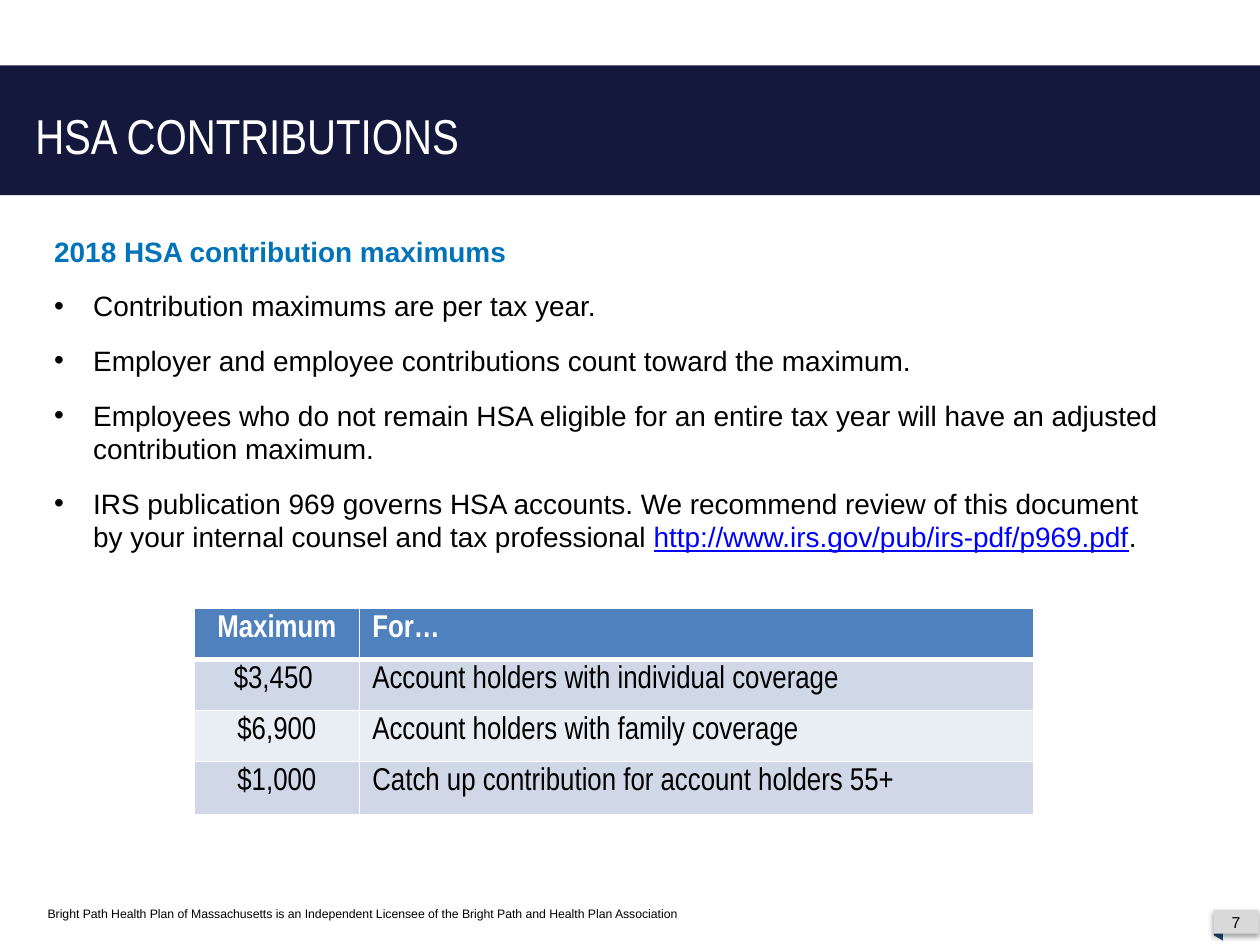
from typing import NamedTuple

from lxml.etree import SubElement
from pptx import Presentation
from pptx.dml.color import RGBColor
from pptx.enum.shapes import MSO_SHAPE
from pptx.enum.text import MSO_ANCHOR, MSO_AUTO_SIZE, PP_ALIGN
from pptx.oxml.ns import qn
from pptx.util import Inches, Pt

WIDE, HIGH = Inches(10), Inches(7.5)
COL, ROW = WIDE / 100, HIGH / 75
BLACK, WHITE, NAVY = "000000", "FFFFFF", "13183C"
BLUE, LINK, HEAD = "0073B9", "0000FF", "4F81BD"
BANDS = ("D0D8E8", "E9EDF4")


class Box(NamedTuple):
    x: float
    y: float
    w: float
    h: float

    def place(self) -> tuple[int, int, int, int]:
        return (round(self.x * COL), round(self.y * ROW),
                round(self.w * COL), round(self.h * ROW))


class Face(NamedTuple):
    name: str
    size: float
    tint: str = BLACK
    bold: bool = False


class Limit(NamedTuple):
    sum: str
    who: str


LIMITS = (
    Limit("Maximum", "For…"),
    Limit("$3,450 ", "Account holders with individual coverage"),
    Limit("$6,900", "Account holders with family coverage"),
    Limit("$1,000", "Catch up contribution for account holders 55+"),
)
POINTS = (
    ("Contribution maximums are per tax year.",),
    ("Employer and employee contributions count toward the maximum.",),
    ("Employees who do not remain HSA eligible for an entire tax year "
     "will have an adjusted contribution maximum.",),
    ("IRS publication 969 governs HSA accounts. We recommend review of this "
     "document by your internal counsel and tax professional ",
     "http://www.irs.gov/pub/irs-pdf/p969.pdf", "."),
)


def color(code: str) -> RGBColor:
    return RGBColor.from_string(code)


def style(para, face: Face, align=PP_ALIGN.LEFT, gap: float = 0) -> None:
    para.alignment = align
    para.space_before = para.space_after = Pt(gap)
    font = para.font
    font.name, font.size, font.bold = face.name, Pt(face.size), face.bold
    font.color.rgb = color(face.tint)


def move(shape, box: Box) -> None:
    shape.left, shape.top, shape.width, shape.height = box.place()


def block(slide, kind, box: Box, fill: str):
    shape = slide.shapes.add_shape(kind, *box.place())
    shape.shadow.inherit = False
    shape.fill.solid()
    shape.fill.fore_color.rgb = color(fill)
    shape.line.fill.background()
    return shape


def shade(shape) -> None:
    drop = SubElement(shape.element.spPr.find(qn("a:effectLst")), qn("a:outerShdw"),
                      blurRad=str(Pt(3.1)), dist=str(Pt(1.8)), dir="5400000")
    tone = SubElement(drop, qn("a:srgbClr"), val=BLACK)
    SubElement(tone, qn("a:alpha"), val="35000")


def label(slide, box: Box, text: str, face: Face, align=PP_ALIGN.LEFT,
          anchor=MSO_ANCHOR.TOP) -> None:
    frame = slide.shapes.add_textbox(*box.place()).text_frame
    frame.word_wrap = True
    frame.vertical_anchor = anchor
    frame.text = text
    style(frame.paragraphs[0], face, align)


def title(slide) -> None:
    band = block(slide, MSO_SHAPE.RECTANGLE, Box(0, 5.2, 100, 10.3), NAVY)
    head = slide.shapes.title
    head.element.addprevious(band.element)
    move(head, Box(1.8, 7.9, 36.1, 5.7))
    frame = head.text_frame
    frame.text = "HSA CONTRIBUTIONS"
    frame.word_wrap = False
    frame.auto_size = MSO_AUTO_SIZE.NONE
    frame.vertical_anchor = MSO_ANCHOR.TOP
    style(frame.paragraphs[0], Face("Arial Narrow", 28, WHITE))


def bullet(para, mark: str = "") -> None:
    props = para._p.get_or_add_pPr()
    dent = Inches(0.31) if mark else 0
    props.set("marL", str(dent))
    props.set("indent", str(-dent))
    if mark:
        sign = SubElement(props, qn("a:buChar"), char=mark)
    else:
        sign = SubElement(props, qn("a:buNone"))
    props.find(qn("a:spcAft")).addnext(sign)


def body(slide) -> None:
    hold = slide.placeholders[1]
    move(hold, Box(3.3, 18.1, 91, 26.6))
    frame = hold.text_frame
    frame.auto_size = MSO_AUTO_SIZE.NONE
    lead = frame.paragraphs[0]
    lead.text = "2018 HSA contribution maximums"
    style(lead, Face("Arial", 16, BLUE, True), gap=6)
    bullet(lead)
    for parts in POINTS:
        para = frame.add_paragraph()
        for part in parts:
            run = para.add_run()
            run.text = part
            if part.startswith("http"):
                run.font.color.rgb = color(LINK)
                run.font.underline = True
        style(para, Face("Arial", 16), gap=6)
        bullet(para, "•")


def edge(cell, side: str, width: float) -> None:
    line = SubElement(cell._tc.get_or_add_tcPr(), qn(f"a:{side}"), w=str(Pt(width)))
    SubElement(SubElement(line, qn("a:solidFill")), qn("a:srgbClr"), val=WHITE)


def grid(slide) -> None:
    box = Box(15.4, 48.3, 66.65, 16.4)
    table = slide.shapes.add_table(len(LIMITS), 2, *box.place()).table
    for col, span in zip(table.columns, (13.15, 53.5)):
        col.width = round(span * COL)
    for at, limit in enumerate(LIMITS):
        table.rows[at].height = round((4.25 if at == len(LIMITS) - 1 else 4.05) * ROW)
        face = Face("Arial Narrow", 18, BLACK if at else WHITE, not at)
        thick = {"lnT": 3 if at == 1 else 1, "lnB": 1 if at else 3}
        for cell, text, align in zip(table.rows[at].cells, limit,
                                     (PP_ALIGN.CENTER, PP_ALIGN.LEFT)):
            for side in ("lnL", "lnR", "lnT", "lnB"):
                edge(cell, side, thick.get(side, 1))
            cell.fill.solid()
            cell.fill.fore_color.rgb = color(BANDS[(at - 1) % 2] if at else HEAD)
            cell.text = text
            style(cell.text_frame.paragraphs[0], face, align, 6)


def foot(slide) -> None:
    label(slide, Box(2.8, 71.4, 55.6, 2.2),
          "Bright Path Health Plan of Massachusetts is an Independent Licensee "
          "of the Bright Path and Health Plan Association", Face("Arial", 7))
    fold = block(slide, MSO_SHAPE.PARALLELOGRAM, Box(95.7, 73.3, 2, 0.7), "1F497D")
    fold.adjustments[0] = 0.6
    fold.rotation = 270
    shade(block(slide, MSO_SHAPE.RECTANGLE, Box(96.3, 72.2, 3.6, 1.9), "D9D9D9"))
    label(slide, Box(96.2, 72.3, 3.8, 1.8), "7", Face("Arial", 9),
          PP_ALIGN.CENTER, MSO_ANCHOR.MIDDLE)


def main() -> None:
    deck = Presentation()
    deck.slide_width, deck.slide_height = WIDE, HIGH
    slide = deck.slides.add_slide(deck.slide_layouts[1])
    title(slide)
    body(slide)
    grid(slide)
    foot(slide)
    deck.save("out.pptx")


if __name__ == "__main__":
    main()
